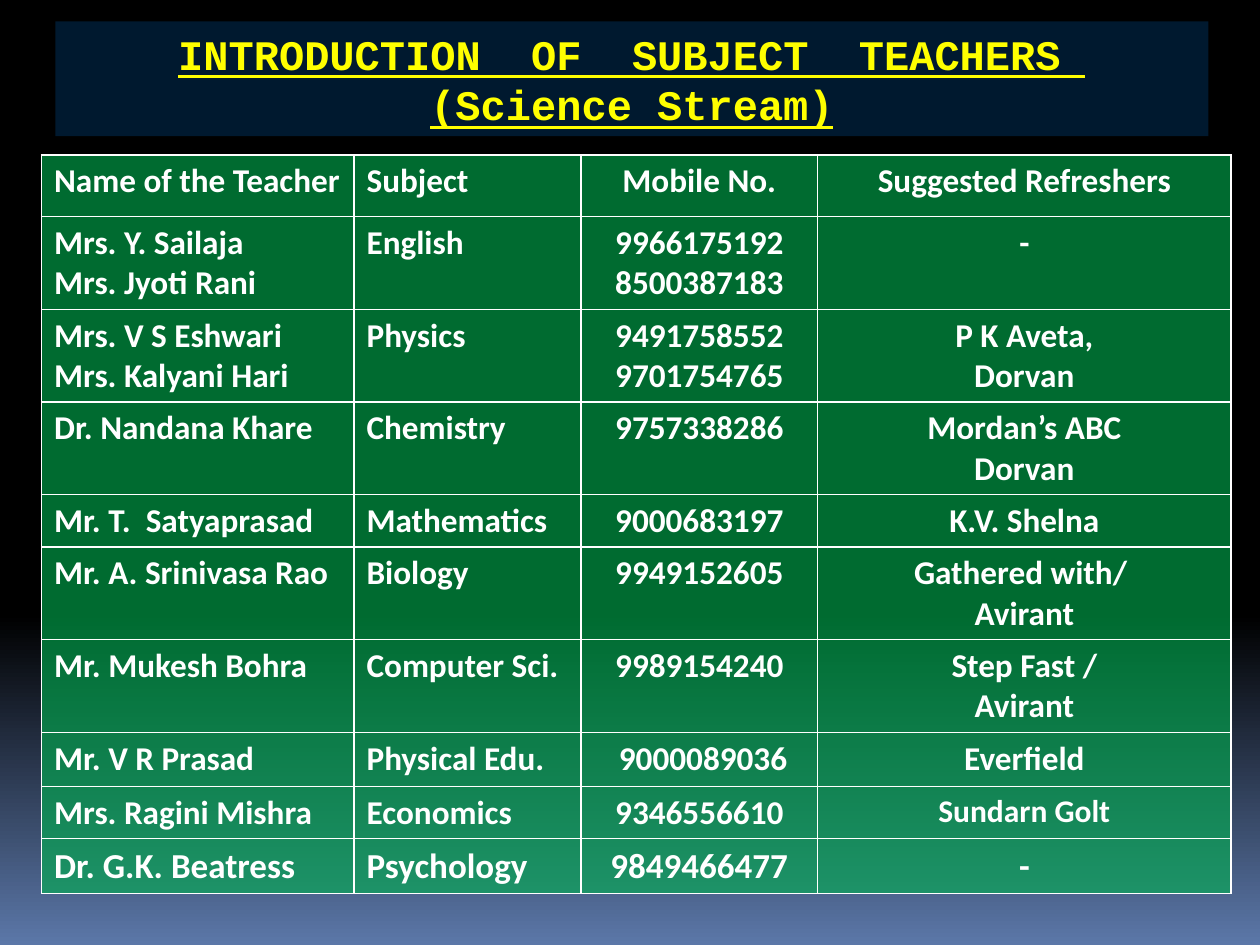
from copy import deepcopy

from lxml.etree import SubElement
from pptx import Presentation
from pptx.dml.color import RGBColor
from pptx.enum.shapes import MSO_SHAPE as Shape
from pptx.enum.text import MSO_ANCHOR as Anchor, PP_ALIGN as Align
from pptx.oxml import parse_xml
from pptx.oxml.ns import nsdecls, qn
from pptx.util import Inches, Pt

WHITE, YELLOW, NAVY, GREEN = "FFFFFF", "FFFF00", "00192F", "00B050"
BACKGROUND = [(0, "000000"), (0.65, "000000"), (1, "5B77A8")]

TITLE = "INTRODUCTION  OF  SUBJECT  TEACHERS \n(Science Stream)"
TEACHERS = [
    ["Name of the Teacher", "Subject", "Mobile No.", "Suggested Refreshers"],
    ["Mrs. Y. Sailaja\nMrs. Jyoti Rani", "English", "9966175192\n8500387183", "-"],
    ["Mrs. V S Eshwari\nMrs. Kalyani Hari", "Physics",
     "9491758552\n9701754765", "P K Aveta,\nDorvan"],
    ["Dr. Nandana Khare", "Chemistry", "9757338286", "Mordan’s ABC\nDorvan"],
    ["Mr. T.  Satyaprasad", "Mathematics", "9000683197", "K.V. Shelna"],
    ["Mr. A. Srinivasa Rao", "Biology", "9949152605", "Gathered with/ \nAvirant"],
    ["Mr. Mukesh Bohra", "Computer Sci.", "9989154240", "Step Fast /\nAvirant"],
    ["Mr. V R Prasad", "Physical Edu.", " 9000089036", "Everfield"],
    ["Mrs. Ragini Mishra", "Economics", "9346556610", "Sundarn Golt"],
    ["Dr. G.K. Beatress", "Psychology", "9849466477", "-"],
]
# Shares of the slide's width and height, in percent
COLUMN_SHARES = [24.8, 18, 18.8, 32.8]
ROW_SHARES = [6.53, 9.33, 9.33, 9.33, 5.47, 9.33, 9.33, 5.73, 5.33, 5.6]
COLUMN_ALIGNS = [Align.LEFT, Align.LEFT, Align.CENTER, Align.CENTER]


def color(value):
    return RGBColor.from_string(value)


def write(frame, text, size, font="Calibri", ink=WHITE, align=Align.LEFT,
          underline=False):
    """Fill a text frame with one paragraph for each line of text."""
    frame.word_wrap = True
    for index, line in enumerate(text.split("\n")):
        paragraph = frame.paragraphs[0] if index == 0 else frame.add_paragraph()
        paragraph.alignment = align
        run = paragraph.add_run()
        run.text = line
        run.font.name, run.font.size = font, Pt(size)
        run.font.bold, run.font.underline = True, underline
        run.font.color.rgb = color(ink)


class SlideBuilder:
    """Holds the style and the current slide; lengths are in percent."""

    def __init__(self, presentation, body_size=19, opacity=61):
        self.width = presentation.slide_width
        self.height = presentation.slide_height
        self.slide = presentation.slides.add_slide(presentation.slide_layouts[6])
        self.body_size = body_size
        self.opacity = opacity

    def across(self, share):
        return round(self.width * share / 100)

    def down(self, share):
        return round(self.height * share / 100)

    def background(self, stops):
        fill = self.slide.background.fill
        fill.gradient()
        fill.gradient_angle = 270
        stop_list = next(self.slide.element.iter(qn("a:gsLst")))
        while len(stop_list) < len(stops):
            stop_list.append(deepcopy(stop_list[-1]))
        for stop, (position, value) in zip(fill.gradient_stops, stops):
            stop.position = position
            stop.color.rgb = color(value)

    def banner(self, text, left, top, width, height):
        shape = self.slide.shapes.add_shape(
            Shape.RECTANGLE, self.across(left), self.down(top),
            self.across(width), self.down(height))
        shape.shadow.inherit = False
        shape.fill.solid()
        shape.fill.fore_color.rgb = color(NAVY)
        shape.line.fill.background()
        shape.text_frame.vertical_anchor = Anchor.MIDDLE
        write(shape.text_frame, text, 24, font="Courier New", ink=YELLOW,
              align=Align.CENTER, underline=True)

    def table(self, rows, left, top, sizes):
        frame = self.slide.shapes.add_table(
            len(rows), len(COLUMN_SHARES), self.across(left), self.down(top),
            self.across(sum(COLUMN_SHARES)), self.down(sum(ROW_SHARES)))
        table = frame.table
        table.first_row = table.horz_banding = False
        for column, share in zip(table.columns, COLUMN_SHARES):
            column.width = self.across(share)
        for row, share in zip(table.rows, ROW_SHARES):
            row.height = self.down(share)
        for r, texts in enumerate(rows):
            for c, text in enumerate(texts):
                cell = table.cell(r, c)
                size = sizes.get((r, c), self.body_size)
                write(cell.text_frame, text, size, align=COLUMN_ALIGNS[c])
                self.style_cell(cell)

    def style_cell(self, cell):
        cell.margin_bottom = self.down(0.6)
        cell.fill.solid()
        cell.fill.fore_color.rgb = color(GREEN)
        properties = cell._tc.get_or_add_tcPr()
        # Let the background show through
        green = next(properties.iter(qn("a:srgbClr")))
        SubElement(green, qn("a:alpha"), val=str(self.opacity * 1000))
        # Borders stand before the fill
        for index, side in enumerate(("lnL", "lnR", "lnT", "lnB")):
            properties.insert(index, parse_xml(
                f'<a:{side} {nsdecls("a")} w="{Pt(1)}"><a:solidFill>'
                f'<a:srgbClr val="{WHITE}"/></a:solidFill></a:{side}>'))


def main():
    presentation = Presentation()
    presentation.slide_width, presentation.slide_height = Inches(10), Inches(7.5)
    builder = SlideBuilder(presentation)
    builder.background(BACKGROUND)
    builder.banner(TITLE, left=4.4, top=2.27, width=91.5, height=12.13)

    # The last row is larger, one refresher smaller
    last = len(TEACHERS) - 1
    sizes = {(last, c): 20 for c in range(len(COLUMN_SHARES))}
    sizes[last - 1, 3] = 18
    builder.table(TEACHERS, left=3.3, top=16.4, sizes=sizes)
    presentation.save("out.pptx")


if __name__ == "__main__":
    main()
